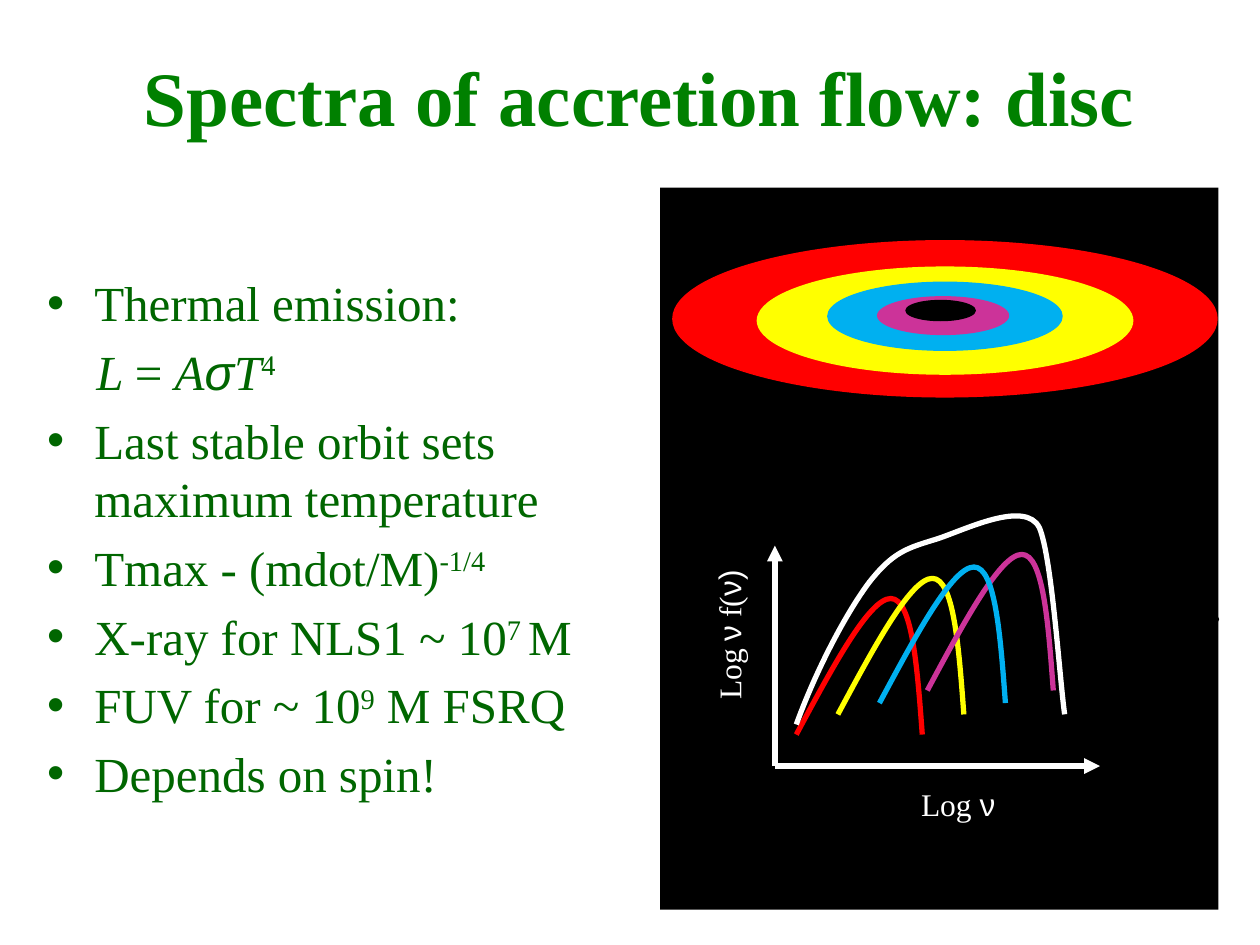
"""Build a slide on the spectrum of an accretion disc, with a ring diagram and a log plot."""
from pptx import Presentation
from pptx.dml.color import RGBColor
from pptx.enum.shapes import MSO_CONNECTOR, MSO_SHAPE
from pptx.enum.text import MSO_ANCHOR, MSO_AUTO_SIZE, PP_ALIGN
from pptx.oxml.ns import qn
from pptx.util import Inches, Pt
from lxml.etree import SubElement

COLORS = {
    "title": "008000", "body": "006600", "black": "000000", "white": "FFFFFF",
    "red": "FF0000", "yellow": "FFFF00", "blue": "00B0F0", "magenta": "CC3399",
}
SERIF, SANS = "Times New Roman", "Arial"

deck = Presentation()
deck.slide_width, deck.slide_height = Inches(10), Inches(7.5)
column, row = deck.slide_width / 100, deck.slide_height / 75
page = deck.slides.add_slide(deck.slide_layouts[1])
shapes = page.shapes


def grid(left, top, width, height):
    return [round(n * unit) for n, unit in zip((left, top, width, height), (column, row) * 2)]


def write(para, spans, size, color):
    """Add (text, marks) spans: i is italic, s is sans serif, ^ is superscript, b is bold."""
    for text, marks in spans:
        span = para.add_run()
        span.text = text
        span.font.size = Pt(size)
        span.font.name = SANS if "s" in marks else SERIF
        span.font.italic = "i" in marks
        span.font.bold = "b" in marks
        span.font.color.rgb = RGBColor.from_string(COLORS[color])
        if "^" in marks:
            span._r.get_or_add_rPr().set("baseline", "30000")


title, body = shapes.title, page.placeholders[1]
title.left, title.top, title.width, title.height = grid(7.5, 1.35, 85, 12.5)
title.text_frame.vertical_anchor = MSO_ANCHOR.MIDDLE
title.text_frame.auto_size = MSO_AUTO_SIZE.NONE
title.text_frame.margin_left = round(2.5 * column)
title.text_frame.paragraphs[0].alignment = PP_ALIGN.CENTER
write(title.text_frame.paragraphs[0], [("Spectra of accretion flow: disc", "b")], 44, "title")

body.left, body.top, body.width, body.height = grid(2.74, 21.15, 44.2, 47.2)
body.text_frame.auto_size = MSO_AUTO_SIZE.NONE
points = [
    [("Thermal emission:", "")],
    [("L ", "i"), ("= ", ""), ("A", "i"), ("σ", "is"), ("T", "i"), ("4", "^")],
    [("Last stable orbit sets maximum temperature", "")],
    [("Tmax - (mdot/M)", ""), ("-1/4", "^")],
    [("X-ray for NLS1 ~ 10", ""), ("7 ", "^"), ("M", "")],
    [("FUV for ~ 10", ""), ("9", "^"), (" M FSRQ", "")],
    [("Depends on spin!", "")],
]
formula = points[1]
for index, spans in enumerate(points):
    para = body.text_frame.add_paragraph() if index else body.text_frame.paragraphs[0]
    if spans is formula:
        properties = para._p.get_or_add_pPr()
        properties.set("marL", str(round(3.9 * column)))
        properties.set("indent", "0")
        SubElement(properties, qn("a:buNone"))
    write(para, spans, 28, "body")

solids = [
    (MSO_SHAPE.RECTANGLE, "black", False, (52.4, 14.9, 44.3, 57.3)),
    (MSO_SHAPE.OVAL, "red", False, (53.35, 19.05, 43.3, 12.5)),
    (MSO_SHAPE.OVAL, "yellow", False, (60.05, 21.15, 29.9, 8.6)),
    (MSO_SHAPE.OVAL, "blue", True, (65.7, 22.4, 18.6, 5.4)),
    (MSO_SHAPE.OVAL, "magenta", False, (69.6, 23.5, 10.5, 3.1)),
    (MSO_SHAPE.OVAL, "black", True, (71.9, 23.85, 5.5, 1.6)),
    (MSO_SHAPE.OVAL, "black", True, (90.8, 48.3, 5.9, 1.7)),
]
for kind, color, outlined, place in solids:
    solid = shapes.add_shape(kind, *grid(*place))
    solid.shadow.inherit = False
    solid.fill.solid()
    solid.fill.fore_color.rgb = RGBColor.from_string(COLORS[color])
    if outlined:
        solid.line.color.rgb = RGBColor.from_string(COLORS[color])
        solid.line.width = Pt(0.75)
    else:
        solid.line.fill.background()

origin = (61.5, 60.8)
for tip in ((61.5, 43.3), (87.3, 60.8)):
    axis = shapes.add_connector(MSO_CONNECTOR.STRAIGHT, *grid(*origin, *tip))
    axis.line.color.rgb = RGBColor.from_string(COLORS["white"])
    axis.line.width = Pt(3)
    SubElement(axis.line._get_or_add_ln(), qn("a:tailEnd"), type="triangle")
    SubElement(axis._element.spPr, qn("a:effectLst"))

hump = [(0, 0), (2.9, -5.4), (5.8, -10.8), (7.5, -10.8), (9.2, -10.8), (9.6, -5.4), (10, 0)]
total = [(0, 0), (1.6, -4.4), (4, -8.9), (5.8, -11.3), (7.7, -13.7), (8.8, -14), (11.1, -14.7),
         (13.3, -15.4), (18.2, -17.9), (19.3, -15.6), (20.3, -13.2), (20.9, -3.6), (21.3, -0.8)]
curves = [
    ("red", hump, 63.2, 58.3, 0),
    ("yellow", hump, 66.5, 56.7, 0),
    ("magenta", hump, 73.6, 54.8, 0),
    ("white", total, 63.2, 57.5, 1.3),
    ("blue", hump, 69.8, 55.8, 0),
]
for color, knots, left, base, overshoot in curves:
    builder = shapes.build_freeform(round(left * column), round(base * row))
    builder.add_line_segments(
        [(round((left + x) * column), round((base + y) * row)) for x, y in knots[1:]], close=False)
    curve = builder.convert_to_shape()
    trim = round(overshoot * row)
    curve.top, curve.height = curve.top + trim, curve.height - trim
    outline = next(curve._element.iter(qn("a:path")))
    outline.set("h", str(curve.height))
    for point in outline.iter(qn("a:pt")):
        point.set("y", str(int(point.get("y")) - trim))
    segments = outline.findall(qn("a:lnTo"))
    for first in range(0, len(segments), 3):
        bend = SubElement(outline, qn("a:cubicBezTo"))
        for segment in segments[first:first + 3]:
            bend.append(segment[0])
            outline.remove(segment)
    curve.shadow.inherit = False
    curve.fill.background()
    curve.line.color.rgb = RGBColor.from_string(COLORS[color])
    curve.line.width = Pt(3)

labels = [
    ((62.3, 61.8, 27.5, 4), 0, [("Log ", ""), ("ν", "s")]),
    ((44.1, 48.4, 27.5, 4), 270, [("Log ", ""), ("ν", "s"), (" f(", ""), ("ν)", "s")]),
]
for place, angle, spans in labels:
    box = shapes.add_textbox(*grid(*place))
    box.rotation = angle
    box.text_frame.word_wrap = True
    box.text_frame.paragraphs[0].alignment = PP_ALIGN.CENTER
    write(box.text_frame.paragraphs[0], spans, 18, "white")

deck.save("out.pptx")
